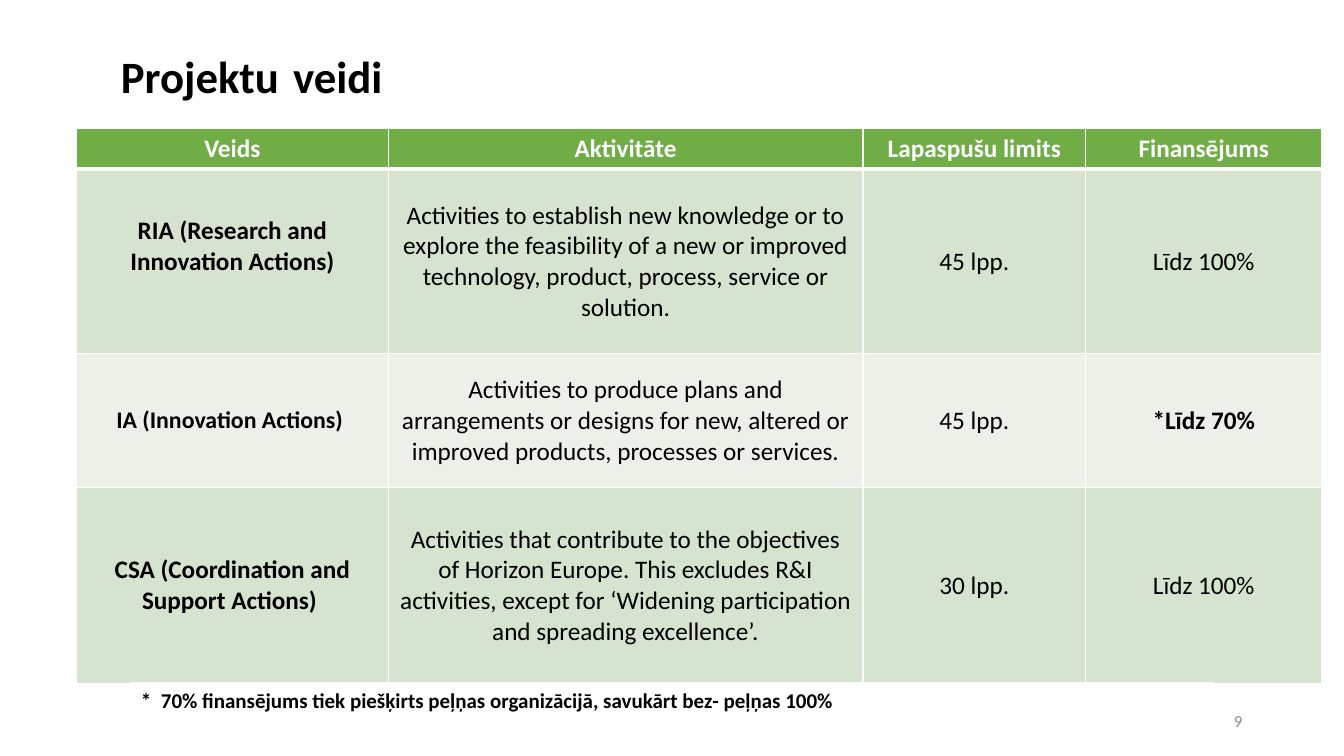
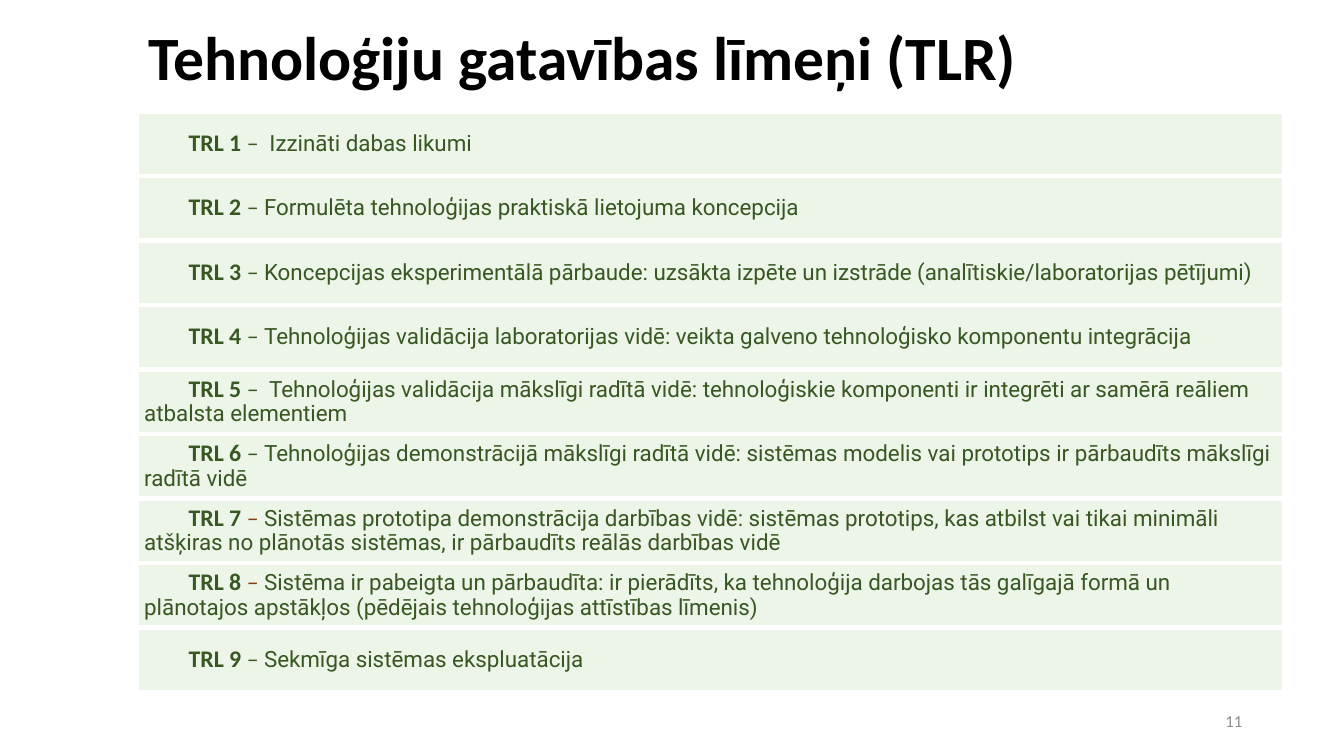
import lxml.etree
import pptx
import pptx.dml.color
import pptx.enum.shapes
import pptx.enum.text
import pptx.oxml.ns
import pptx.util

Inches = pptx.util.Inches
Pt = pptx.util.Pt
ALIGN = pptx.enum.text.PP_ALIGN
ANCHOR = pptx.enum.text.MSO_ANCHOR
RECTANGLE = pptx.enum.shapes.MSO_SHAPE.RECTANGLE
qn = pptx.oxml.ns.qn

BLACK = "000000"
WHITE = "FFFFFF"
GREY = "8C8C8C"
HEADER_GREEN = "70AD47"
ROW_GREENS = ["D5E3CF", "EBF1E9"]
BAR_GREEN = "ECF5E7"
TEXT_GREEN = "385723"
BROWN = "843C0B"


def paint(fill, colour):
    fill.solid()
    fill.fore_color.rgb = pptx.dml.color.RGBColor.from_string(colour)


def add_run(para, text, size, colour=BLACK, bold=False, font="Calibri"):
    span = para.add_run()
    span.text = text
    span.font.name = font
    span.font.size = Pt(size)
    span.font.bold = bold
    paint(span.font.fill, colour)


deck = pptx.Presentation()
deck.slide_width = Inches(13.33)
deck.slide_height = Inches(7.5)

headings = [
    (1.1, 0, [("Projektu", 32), (" ", 44), ("veidi", 32)], "9"),
    (1.37, -0.12, [("Tehnoloģiju gatavības līmeņi (TLR)", 44)], "11"),
]
pages = []
for left, top, title, number in headings:
    page = deck.slides.add_slide(deck.slide_layouts[6])
    pages.append(page)

    title_box = page.shapes.add_textbox(Inches(left), Inches(top), Inches(11.5), Inches(1.45))
    number_box = page.shapes.add_textbox(Inches(9.42), Inches(6.95), Inches(3), Inches(0.4))
    for box in (title_box, number_box):
        box.text_frame.word_wrap = True
        box.text_frame.vertical_anchor = ANCHOR.MIDDLE

    para = title_box.text_frame.paragraphs[0]
    para.line_spacing = 0.9
    for text, size in title:
        add_run(para, text, size, bold=True)

    para = number_box.text_frame.paragraphs[0]
    para.alignment = ALIGN.RIGHT
    add_run(para, number, 12, GREY)

types_page, levels_page = pages

rows = [
    ["Veids", "Aktivitāte", "Lapaspušu limits", "Finansējums"],
    [
        "RIA (Research and Innovation Actions)",
        "Activities to establish new knowledge or to explore the feasibility of a new or improved "
        "technology, product, process, service or solution.",
        "45 lpp.",
        "Līdz 100%",
    ],
    [
        "IA (Innovation Actions) ",
        "Activities to produce plans and arrangements or designs for new, altered or improved "
        "products, processes or services.",
        "45 lpp.",
        "*Līdz 70%",
    ],
    [
        "CSA (Coordination and Support Actions) ",
        "Activities that contribute to the objectives of Horizon Europe. This excludes R&I "
        "activities, except for ‘Widening participation and spreading excellence’.",
        "30 lpp.",
        "Līdz 100%",
    ],
]
column_widths = [3.09, 4.71, 2.21, 2.34]
row_heights = [0.41, 1.83, 1.33, 1.94]

table = types_page.shapes.add_table(
    len(rows), len(column_widths), Inches(0.76), Inches(1.27),
    Inches(sum(column_widths)), Inches(sum(row_heights)),
).table
table.horz_banding = False
for column, width in zip(table.columns, column_widths):
    column.width = Inches(width)
for row, height in zip(table.rows, row_heights):
    row.height = Inches(height)

for row_index, texts in enumerate(rows):
    is_header = row_index == 0
    for column_index, text in enumerate(texts):
        cell = table.cell(row_index, column_index)
        cell.vertical_anchor = ANCHOR.TOP if is_header else ANCHOR.MIDDLE
        properties = cell._tc.get_or_add_tcPr()
        for side in ("lnL", "lnR", "lnT", "lnB"):
            thick = (is_header and side == "lnB") or (row_index == 1 and side == "lnT")
            border = lxml.etree.SubElement(properties, qn("a:" + side), w=str(Pt(3 if thick else 1)))
            solid = lxml.etree.SubElement(border, qn("a:solidFill"))
            lxml.etree.SubElement(solid, qn("a:srgbClr"), val=WHITE)
        paint(cell.fill, HEADER_GREEN if is_header else ROW_GREENS[(row_index - 1) % 2])

        para = cell.text_frame.paragraphs[0]
        para.alignment = ALIGN.CENTER
        size = 17 if text.startswith("IA") else 18
        bold = is_header or column_index == 0 or text.startswith("*")
        add_run(para, text, size, WHITE if is_header else BLACK, bold)
table.cell(1, 0).margin_bottom = Inches(0.35)

footnote = types_page.shapes.add_shape(RECTANGLE, Inches(1.3), Inches(6.77), Inches(10.73), Inches(0.35))
footnote.shadow.inherit = False
footnote.fill.background()
paint(footnote.line.fill, WHITE)
footnote.line.width = Pt(1)
footnote.text_frame.word_wrap = True
footnote.text_frame.vertical_anchor = ANCHOR.TOP
para = footnote.text_frame.paragraphs[0]
para.alignment = ALIGN.LEFT
add_run(para, "*  70% finansējums tiek piešķirts peļņas organizācijā, savukārt bez- peļņas 100%", 15, bold=True)

levels = [
    ("–  ", "Izzināti dabas likumi", TEXT_GREEN),
    ("– ", "Formulēta tehnoloģijas praktiskā lietojuma koncepcija", TEXT_GREEN),
    ("– ", "Koncepcijas eksperimentālā pārbaude: uzsākta izpēte un izstrāde "
     "(analītiskie/laboratorijas pētījumi)", TEXT_GREEN),
    ("– ", "Tehnoloģijas validācija laboratorijas vidē: veikta galveno tehnoloģisko "
     "komponentu integrācija", TEXT_GREEN),
    ("– ", " Tehnoloģijas validācija mākslīgi radītā vidē: tehnoloģiskie komponenti ir "
     "integrēti ar samērā reāliem atbalsta elementiem", TEXT_GREEN),
    ("– ", "Tehnoloģijas demonstrācijā mākslīgi radītā vidē: sistēmas modelis vai prototips "
     "ir pārbaudīts mākslīgi radītā vidē", TEXT_GREEN),
    ("– ", "Sistēmas prototipa demonstrācija darbības vidē: sistēmas prototips, kas atbilst vai "
     "tikai minimāli atšķiras no plānotās sistēmas, ir pārbaudīts reālās darbības vidē", BROWN),
    ("– ", "Sistēma ir pabeigta un pārbaudīta: ir pierādīts, ka tehnoloģija darbojas tās galīgajā "
     "formā un plānotajos apstākļos (pēdējais tehnoloģijas attīstības līmenis)", BROWN),
    ("– ", "Sekmīga sistēmas ekspluatācija", TEXT_GREEN),
]
for index, (dash, description, dash_colour) in enumerate(levels):
    bar = levels_page.shapes.add_shape(
        RECTANGLE, Inches(1.37), Inches(1.12 + 0.64 * index), Inches(11.35), Inches(0.61))
    bar.shadow.inherit = False
    paint(bar.fill, BAR_GREEN)
    paint(bar.line.fill, WHITE)
    bar.line.width = Pt(1)

    frame = bar.text_frame
    frame.word_wrap = True
    frame.vertical_anchor = ANCHOR.MIDDLE
    frame.margin_left = frame.margin_right = Inches(0.06)
    frame.margin_top = frame.margin_bottom = Inches(0.04)

    para = frame.paragraphs[0]
    para.alignment = ALIGN.LEFT
    para.line_spacing = 0.9
    para._p.get_or_add_pPr().set("indent", str(Inches(0.44)))
    add_run(para, f"TRL {index + 1} ", 17, TEXT_GREEN, bold=True)
    add_run(para, dash, 17, dash_colour)
    add_run(para, description, 16, TEXT_GREEN, font="Roboto")

deck.save("out.pptx")
